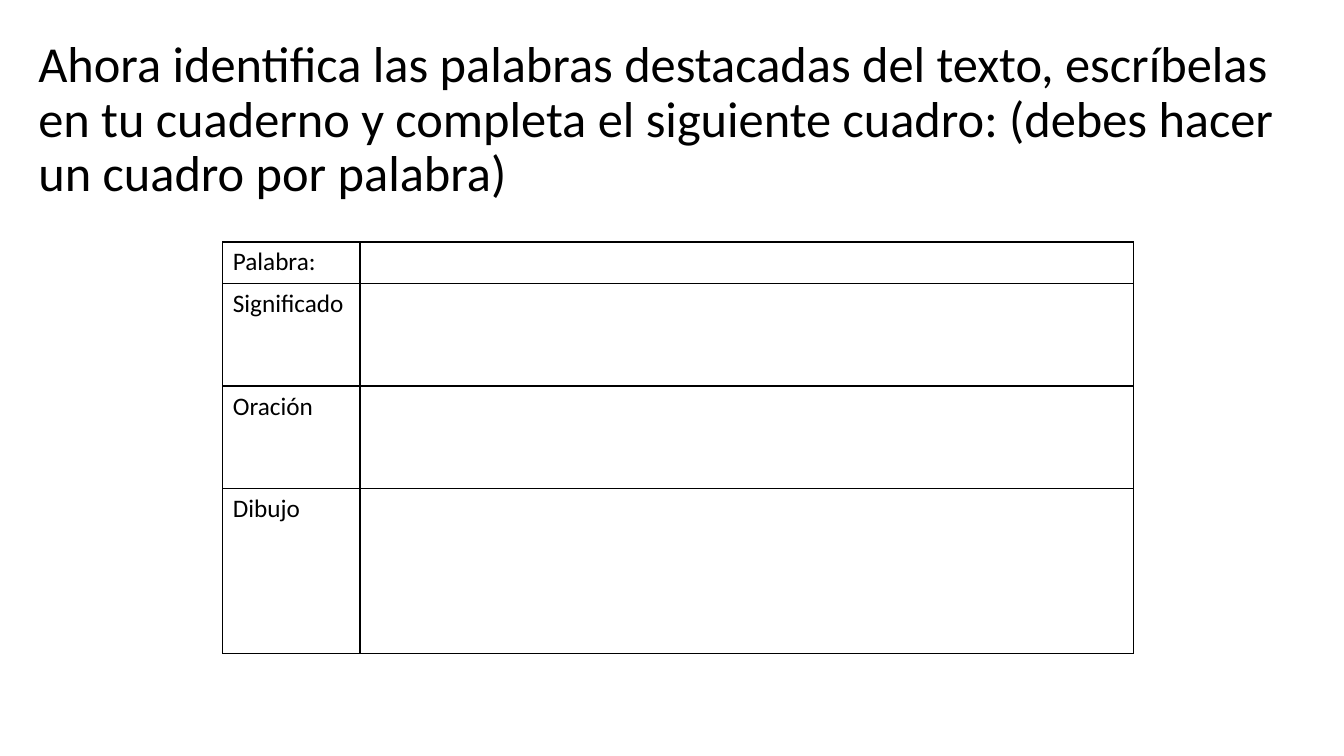
from dataclasses import dataclass

from lxml import etree
from pptx import Presentation
from pptx.dml.color import RGBColor
from pptx.enum.text import MSO_ANCHOR, PP_ALIGN
from pptx.oxml.ns import qn
from pptx.util import Inches, Pt

MIDDLE = MSO_ANCHOR.MIDDLE
LEFT = PP_ALIGN.LEFT
TITLE_ONLY_LAYOUT = 5


@dataclass(frozen=True)
class Theme:
    font: str = "Calibri"
    ink: str = "000000"
    title_size: int = 36
    cell_size: int = 18
    border_width: int = 1


THEME = Theme()
TITLE = (
    "Ahora identifica las palabras destacadas del texto, escríbelas en tu "
    "cuaderno y completa el siguiente cuadro: (debes hacer un cuadro por palabra)"
)
ROWS = [("Palabra:", 0.41), ("Significado", 1.02), ("Oración", 1.02), ("Dibujo", 1.63)]
COLUMN_WIDTHS = [1.36, 7.67]


def add_text(paragraph, text, size):
    run = paragraph.add_run()
    run.text = text
    run.font.name = THEME.font
    run.font.size = Pt(size)
    run.font.color.rgb = RGBColor.from_string(THEME.ink)


def add_title(slide, text):
    title = slide.shapes.title
    title.left, title.top = Inches(0.28), Inches(0)
    title.width, title.height = Inches(12.77), Inches(2.4)
    frame = title.text_frame
    frame.word_wrap = True
    frame.vertical_anchor = MIDDLE
    paragraph = frame.paragraphs[0]
    paragraph.alignment = LEFT
    paragraph.line_spacing = 0.9
    add_text(paragraph, text, THEME.title_size)


def set_borders(cell):
    properties = cell._tc.get_or_add_tcPr()
    for side in ("a:lnL", "a:lnR", "a:lnT", "a:lnB"):
        line = etree.SubElement(properties, qn(side), w=str(Pt(THEME.border_width)))
        fill = etree.SubElement(line, qn("a:solidFill"))
        etree.SubElement(fill, qn("a:srgbClr"), val=THEME.ink)


def add_word_table(slide, rows, column_widths):
    total_height = sum(height for _, height in rows)
    frame = slide.shapes.add_table(
        len(rows), len(column_widths), Inches(2.21), Inches(2.4),
        Inches(sum(column_widths)), Inches(total_height),
    )
    table = frame.table
    table.first_row = False
    table.horz_banding = False
    for column, width in zip(table.columns, column_widths):
        column.width = Inches(width)
    for row, (label, height) in zip(table.rows, rows):
        row.height = Inches(height)
        for cell in row.cells:
            set_borders(cell)
            cell.fill.background()
        add_text(row.cells[0].text_frame.paragraphs[0], label, THEME.cell_size)


def main():
    presentation = Presentation()
    presentation.slide_width = Inches(13.33)
    presentation.slide_height = Inches(7.5)
    layout = presentation.slide_layouts[TITLE_ONLY_LAYOUT]
    slide = presentation.slides.add_slide(layout)
    add_title(slide, TITLE)
    add_word_table(slide, ROWS, COLUMN_WIDTHS)
    presentation.save("out.pptx")


if __name__ == "__main__":
    main()
